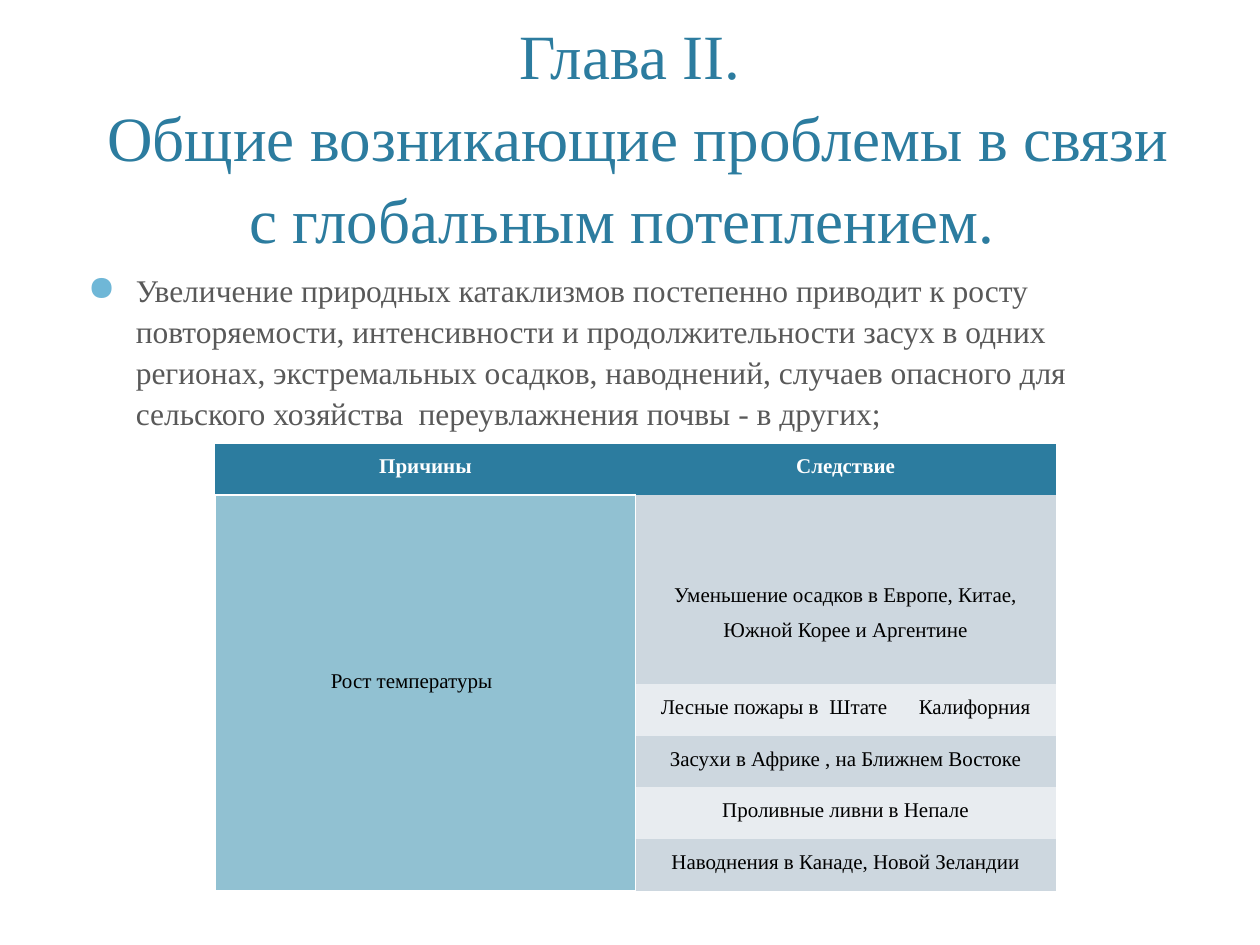
"""Build a slide on the problems that global warming causes."""
from dataclasses import dataclass

from lxml.etree import SubElement
from pptx import Presentation
from pptx.dml.color import RGBColor
from pptx.enum.text import MSO_ANCHOR as Anchor, MSO_AUTO_SIZE as AutoSize, PP_ALIGN as Align
from pptx.oxml import parse_xml
from pptx.oxml.ns import nsdecls, qn
from pptx.util import Inches, Pt

FONT = "Times New Roman"
TEAL = RGBColor(0x2C, 0x7C, 0x9F)
GRAY = RGBColor(0x59, 0x59, 0x59)
WHITE = RGBColor(0xFF, 0xFF, 0xFF)
BLACK = RGBColor(0x00, 0x00, 0x00)
CAUSE_FILL = RGBColor(0x91, 0xC1, 0xD2)
BANDS = (RGBColor(0xCD, 0xD7, 0xDF), RGBColor(0xE8, 0xEC, 0xF0))
BULLET = RGBColor(0x6F, 0xB7, 0xD7)
NO_STYLE = "{2D5ABB26-0587-4C30-8999-92F81FD0307C}"
LINE_SPACING = 1.08
CELL_LINE = 0.28


@dataclass(frozen=True)
class Piece:
    text: str
    tracking: int = 0


@dataclass(frozen=True)
class TextStyle:
    size: int
    color: RGBColor
    bold: bool = False


@dataclass(frozen=True)
class TableCell:
    row: int
    column: int
    pieces: tuple[Piece, ...]
    fill: RGBColor
    style: TextStyle = TextStyle(12, BLACK)
    anchor: Anchor = Anchor.TOP
    right: float = 0.07
    top: float = 0
    bottom: float = 0


HEADER = TextStyle(12, WHITE, True)
CELLS = (
    TableCell(0, 0, (Piece("Причины"),), TEAL, HEADER),
    TableCell(0, 1, (Piece("Следствие"),), TEAL, HEADER),
    TableCell(1, 0, (Piece("Рост температуры"),), CAUSE_FILL,
              anchor=Anchor.MIDDLE, right=0.29, bottom=CELL_LINE),
    TableCell(1, 1, (Piece("Уменьшение осадков в Европе, Китае, Южной Корее и Аргентине"),),
              BANDS[0], anchor=Anchor.MIDDLE, top=CELL_LINE),
    TableCell(2, 1, (Piece("Лесные пожары в"), Piece(" ", 3), Piece("Штате"),
                     Piece(" ", 15), Piece("Калифорния")), BANDS[1]),
    TableCell(3, 1, (Piece("Засухи в Африке , на Ближнем Востоке"),), BANDS[0]),
    TableCell(4, 1, (Piece("Проливные ливни в Непале"),), BANDS[1]),
    TableCell(5, 1, (Piece("Наводнения в Канаде, Новой Зеландии"),), BANDS[0]),
)
BODY = (
    Piece("Увеличение природных катаклизмов постепенно приводит к росту повторяемости, "
          "интенсивности и продолжительности засух в одних регионах, экстремальных осадков, "
          "наводнений, случаев опасного для сельского хозяйства"),
    Piece(" ", 4),
    Piece("переувлажнения почвы - в других;"),
)


def add_run(paragraph, piece: Piece, style: TextStyle) -> None:
    run = paragraph.add_run()
    run.text = piece.text
    run.font.name = FONT
    run.font.size = Pt(style.size)
    run.font.bold = style.bold
    run.font.color.rgb = style.color
    if piece.tracking:
        run.font._element.set("spc", str(piece.tracking * 100))


def place(shape, left: float, top: float, width: float, height: float) -> None:
    shape.left, shape.top = Inches(left), Inches(top)
    shape.width, shape.height = Inches(width), Inches(height)


def fill_title(title) -> None:
    place(title, 0.6, 0.62, 8.8, 1.46)
    frame = title.text_frame
    frame.auto_size = AutoSize.NONE
    frame.vertical_anchor = Anchor.BOTTOM
    paragraph = frame.paragraphs[0]
    paragraph.alignment = Align.CENTER
    paragraph.line_spacing = LINE_SPACING
    style = TextStyle(36, TEAL)
    add_run(paragraph, Piece("Глава II."), style)
    paragraph.add_line_break()
    add_run(paragraph, Piece(" Общие возникающие проблемы в связи с глобальным потеплением. "), style)


def add_body(slide) -> None:
    box = slide.shapes.add_textbox(Inches(0.6), Inches(2.08), Inches(8.8), Inches(4.75))
    box.text_frame.word_wrap = True
    paragraph = box.text_frame.paragraphs[0]
    paragraph.line_spacing = LINE_SPACING
    for piece in BODY:
        add_run(paragraph, piece, TextStyle(18, GRAY))
    properties = paragraph._p.get_or_add_pPr()
    properties.set("marL", str(Inches(0.38)))
    properties.set("indent", str(-Inches(0.38)))
    color = SubElement(properties, qn("a:buClr"))
    SubElement(color, qn("a:srgbClr"), val=str(BULLET))
    SubElement(properties, qn("a:buSzPct"), val="110000")
    SubElement(properties, qn("a:buChar"), char="●")


def set_borders(cell, sides: str) -> None:
    properties = cell._tc.get_or_add_tcPr()
    for position, side in enumerate(sides):
        properties.insert(position, parse_xml(
            f'<a:ln{side} {nsdecls("a")} w="{Pt(1)}"><a:solidFill>'
            f'<a:srgbClr val="{WHITE}"/></a:solidFill></a:ln{side}>'))


def fill_cell(table, content: TableCell) -> None:
    cell = table.cell(content.row, content.column)
    cell.fill.solid()
    cell.fill.fore_color.rgb = content.fill
    cell.vertical_anchor = content.anchor
    cell.margin_left, cell.margin_right = Inches(0.07), Inches(content.right)
    cell.margin_top, cell.margin_bottom = Inches(content.top), Inches(content.bottom)
    paragraph = cell.text_frame.paragraphs[0]
    paragraph.alignment = Align.CENTER
    paragraph.line_spacing = 1.5
    for piece in content.pieces:
        add_run(paragraph, piece, content.style)


def add_effects_table(slide) -> None:
    heights = (0.41, 1.5, 0.41, 0.41, 0.41, 0.41)
    table = slide.shapes.add_table(len(heights), 2, Inches(1.71), Inches(3.52),
                                   Inches(6.67), Inches(sum(heights))).table
    table.first_row = table.horz_banding = False
    table._tbl.tblPr.find(qn("a:tableStyleId")).text = NO_STYLE
    for row, height in zip(table.rows, heights):
        row.height = Inches(height)
    table.cell(1, 0).merge(table.cell(5, 0))
    for content in CELLS:
        fill_cell(table, content)
    set_borders(table.cell(0, 0), "B")
    set_borders(table.cell(1, 0), "LRTB")
    for row in range(2, len(heights)):
        set_borders(table.cell(row, 0), "LR")


def main() -> None:
    presentation = Presentation()
    presentation.slide_width, presentation.slide_height = Inches(10), Inches(7.5)
    slide = presentation.slides.add_slide(presentation.slide_layouts[5])
    fill_title(slide.shapes.title)
    add_body(slide)
    add_effects_table(slide)
    presentation.save("out.pptx")


if __name__ == "__main__":
    main()
